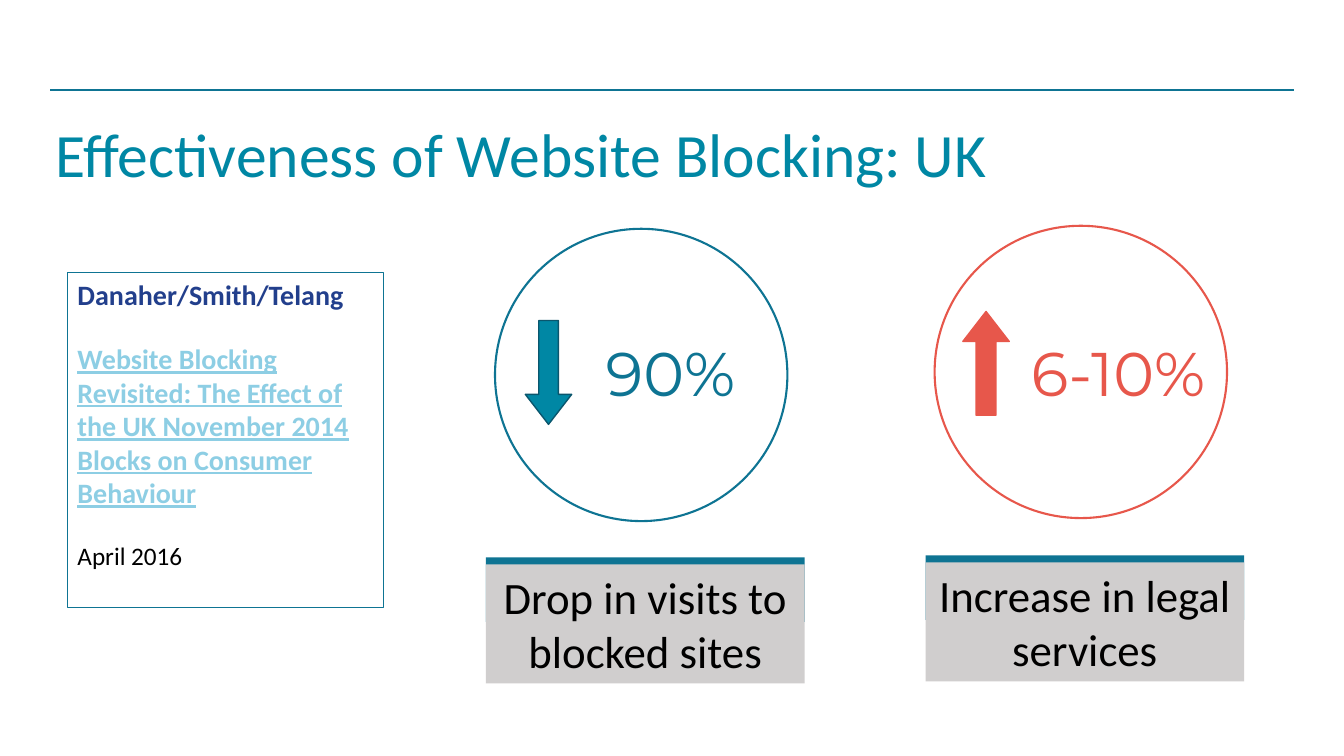
from dataclasses import dataclass

from lxml.etree import SubElement
from pptx import Presentation
from pptx.dml.color import RGBColor as Rgb
from pptx.enum.shapes import MSO_CONNECTOR as Conn, MSO_SHAPE as Kind
from pptx.enum.text import MSO_ANCHOR as Anchor, PP_ALIGN as Align
from pptx.oxml.ns import qn
from pptx.util import Inches, Pt


@dataclass(frozen=True)
class Theme:
    teal: str = "0E7493"
    bright: str = "0087A4"
    edge: str = "0A566D"
    coral: str = "E7574B"
    navy: str = "223F8C"
    sky: str = "8DCEE4"
    grey: str = "D0CECE"
    white: str = "FFFFFF"
    black: str = "000000"
    body: str = "Calibri"
    digit: str = "Montserrat"
    head: int = 44
    label: int = 32
    cite: int = 20
    date: int = 18


THEME = Theme()


def add_rule(slide, left, top, right):
    """Draw the horizontal rule above the title."""
    ends = [Inches(v) for v in (left, top, right, top)]
    rule = slide.shapes.add_connector(Conn.STRAIGHT, *ends)
    rule.line.color.rgb = Rgb.from_string(THEME.teal)
    rule.line.width = Pt(1.5)
    SubElement(rule._element.spPr, qn("a:effectLst"))


def add_form(slide, kind, box, fill=None, line=None, width=1):
    """Add a flat preset shape with optional fill and outline."""
    form = slide.shapes.add_shape(kind, *[Inches(v) for v in box])
    form.shadow.inherit = False
    if fill:
        form.fill.solid()
        form.fill.fore_color.rgb = Rgb.from_string(fill)
    else:
        form.fill.background()
    if line:
        form.line.color.rgb = Rgb.from_string(line)
        form.line.width = Pt(width)
    else:
        form.line.fill.background()
    return form


def style(para, text, size, color, face=THEME.body, align=Align.LEFT, bold=False):
    """Fill a paragraph and set its font."""
    para.text = text
    para.alignment = align
    font = para.font
    font.name, font.size, font.bold = face, Pt(size), bold
    font.color.rgb = Rgb.from_string(color)


def add_text(slide, box, text, color, face=THEME.body, align=Align.LEFT, inset=None):
    """Add a large line of text in a wrapping box."""
    frame = slide.shapes.add_textbox(*[Inches(v) for v in box]).text_frame
    frame.word_wrap = True
    if inset is not None:
        frame.margin_left = frame.margin_right = Inches(inset)
        frame.margin_top = frame.margin_bottom = Inches(inset)
    para = frame.paragraphs[0]
    style(para, text, THEME.head, color, face, align)
    para.line_spacing = 0.9


def add_ring(slide, left, top, color, value, box):
    """Draw a circle holding a percentage."""
    add_form(slide, Kind.OVAL, (left, top, 2.9, 2.9), THEME.white, color, 1.5)
    add_text(slide, box, value, color, THEME.digit, Align.CENTER, 0)


def add_arrow(slide, left, top, fill, line, turn=0):
    """Draw a block arrow, pointing up unless turned."""
    arrow = add_form(slide, Kind.UP_ARROW, (left, top, 0.46, 1.03), fill, line)
    arrow.adjustments[0] = 0.424
    arrow.adjustments[1] = 0.647
    arrow.rotation = turn


def add_label(slide, left, top, text):
    """Draw a grey caption with a teal strip on top."""
    add_form(slide, Kind.RECTANGLE, (left, top, 3.16, 0.64), THEME.teal)
    card = add_form(slide, Kind.RECTANGLE, (left, top + 0.07, 3.16, 1.18), THEME.grey)
    frame = card.text_frame
    frame.word_wrap = True
    style(frame.paragraphs[0], text, THEME.label, THEME.black, align=Align.CENTER)


def add_cite(slide, box, author, work, date):
    """Draw the framed study reference."""
    card = add_form(slide, Kind.RECTANGLE, box, line=THEME.teal, width=0.75)
    frame = card.text_frame
    frame.word_wrap = True
    frame.vertical_anchor = Anchor.TOP
    style(frame.paragraphs[0], author, THEME.cite, THEME.navy, bold=True)
    title, when = frame.add_paragraph(), frame.add_paragraph()
    style(title, work, THEME.cite, THEME.sky, bold=True)
    title.font.underline = True
    style(when, date, THEME.date, THEME.black)
    title.space_before = when.space_before = Pt(22)


def main():
    """Build and save the slide."""
    deck = Presentation()
    deck.slide_width, deck.slide_height = Inches(13.33), Inches(7.5)
    slide = deck.slides.add_slide(deck.slide_layouts[6])
    add_rule(slide, 0.5, 0.89, 12.83)
    add_text(slide, (0.45, 1.18, 11.5, 0.68),
             "Effectiveness of Website Blocking: UK", THEME.bright)
    add_label(slide, 4.82, 5.53, "Drop in visits to blocked sites")
    add_ring(slide, 4.91, 2.27, THEME.teal, "90%", (5.49, 3.41, 2.32, 0.59))
    add_arrow(slide, 5.21, 3.18, THEME.bright, THEME.edge, 180)
    add_ring(slide, 9.27, 2.24, THEME.coral, "6-10%", (9.9, 3.41, 2.38, 0.73))
    add_label(slide, 9.18, 5.51, "Increase in legal services")
    add_cite(slide, (0.67, 2.7, 3.13, 3.33), "Danaher/Smith/Telang",
             "Website Blocking Revisited: The Effect of the UK November 2014 "
             "Blocks on Consumer Behaviour", "April 2016")
    add_arrow(slide, 9.55, 3.09, THEME.coral, THEME.coral)
    deck.save("out.pptx")


if __name__ == "__main__":
    main()
